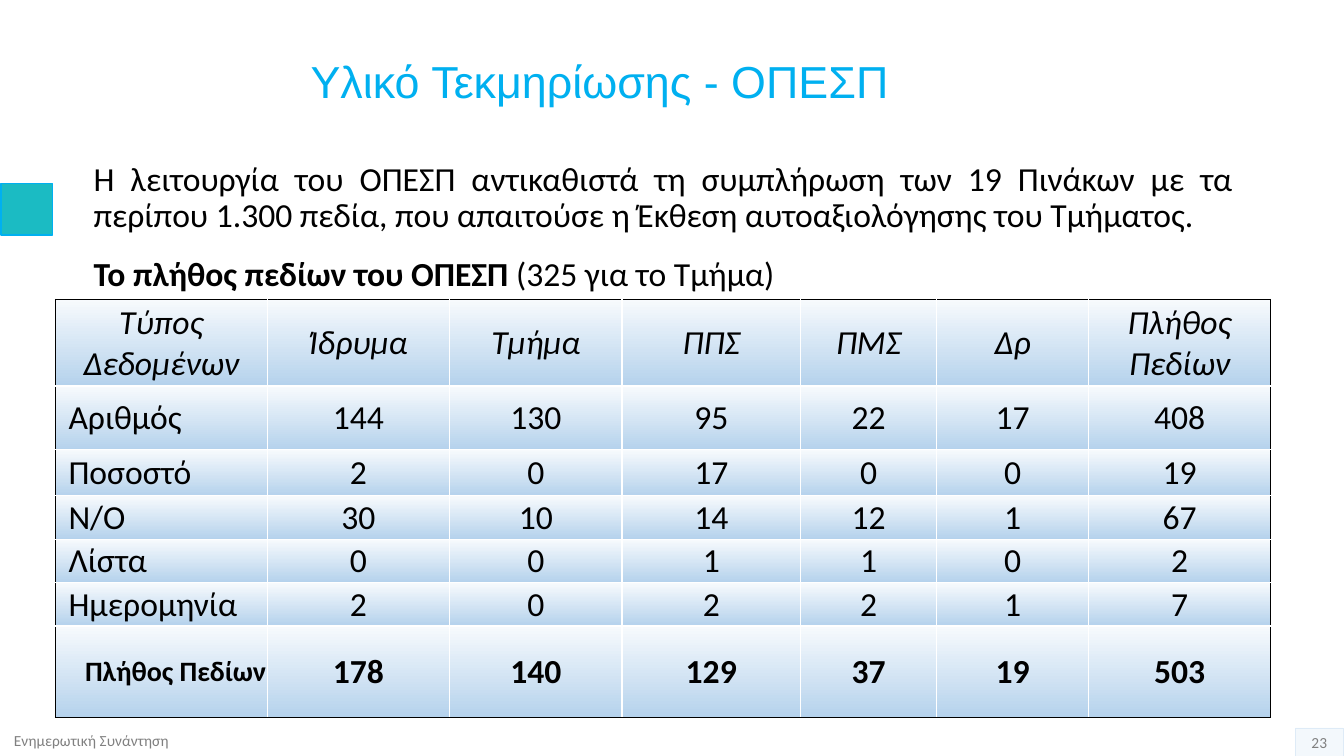
from dataclasses import dataclass

from lxml.etree import SubElement
from pptx import Presentation
from pptx.dml.color import RGBColor
from pptx.enum.shapes import MSO_SHAPE as Shape
from pptx.enum.text import MSO_ANCHOR as Anchor, PP_ALIGN as Align
from pptx.oxml.ns import qn
from pptx.util import Inches, Pt


@dataclass(frozen=True)
class Theme:
    """Colours, fonts and type sizes of the slide."""
    accent: str = "00B0F0"
    marker: str = "1BBBC3"
    ink: str = "000000"
    muted: str = "808080"
    pale: str = "DEEBF7"
    grid: str = "FFFFFF"
    cell_top: str = "F7FAFD"
    cell_bottom: str = "B5D2EC"
    title_font: str = "Arial"
    body_font: str = "Calibri"
    title_size: int = 32
    body_size: int = 24
    total_label_size: int = 20
    footer_size: int = 11


THEME = Theme()
TITLE = "Υλικό Τεκμηρίωσης - ΟΠΕΣΠ"
INTRO = ("Η λειτουργία του ΟΠΕΣΠ αντικαθιστά τη συμπλήρωση των 19 Πινάκων με τα "
         "περίπου 1.300 πεδία, που απαιτούσε η Έκθεση αυτοαξιολόγησης του Τμήματος.")
COUNT_LABEL = "Το πλήθος πεδίων του ΟΠΕΣΠ "
COUNT_NOTE = "(325 για το Τμήμα)"
FIELD_COUNTS = [
    ["Τύπος Δεδομένων", "Ίδρυμα", "Τμήμα", "ΠΠΣ", "ΠΜΣ", "Δρ", "Πλήθος Πεδίων"],
    ["Αριθμός", 144, 130, 95, 22, 17, 408],
    ["Ποσοστό", 2, 0, 17, 0, 0, 19],
    ["Ν/Ο", 30, 10, 14, 12, 1, 67],
    ["Λίστα", 0, 0, 1, 1, 0, 2],
    ["Ημερομηνία", 2, 0, 2, 2, 1, 7],
    ["Πλήθος Πεδίων", 178, 140, 129, 37, 19, 503],
]
COLUMN_WIDTHS = [2.1, 1.81, 1.71, 1.77, 1.35, 1.51, 1.8]
ROW_HEIGHTS = [0.86, 0.63, 0.46, 0.43, 0.43, 0.43, 0.91]


def box(left, top, width, height):
    """Return a position and size in inches."""
    return [Inches(length) for length in (left, top, width, height)]


def style_text(text, size, color, face=THEME.body_font, bold=False, italic=False):
    """Format the font of a run or of a paragraph."""
    text.font.size, text.font.name = Pt(size), face
    text.font.bold, text.font.italic = bold, italic
    text.font.color.rgb = RGBColor.from_string(color)


def add_title(slide):
    """Place and format the title placeholder."""
    title = slide.shapes.title
    title.left, title.top, title.width, title.height = box(0.92, 0.11, 10.06, 1.45)
    title.text_frame.text = TITLE
    title.text_frame.vertical_anchor = Anchor.MIDDLE
    heading = title.text_frame.paragraphs[0]
    heading.alignment, heading.line_spacing = Align.CENTER, 0.9
    style_text(heading.runs[0], THEME.title_size, THEME.accent, THEME.title_font)


def add_rectangle(slide, place, fill, line, line_width):
    """Draw a flat rectangle with an outline."""
    rectangle = slide.shapes.add_shape(Shape.RECTANGLE, *place)
    rectangle.shadow.inherit = False
    rectangle.fill.solid()
    rectangle.fill.fore_color.rgb = RGBColor.from_string(fill)
    rectangle.line.color.rgb = RGBColor.from_string(line)
    rectangle.line.width = Pt(line_width)
    return rectangle


def write_footer(shape, text, alignment):
    """Write a small muted line in the middle of a shape's height."""
    frame = shape.text_frame
    frame.word_wrap = True
    frame.vertical_anchor = Anchor.MIDDLE
    frame.margin_top = frame.margin_bottom = 0
    frame.text = text
    frame.paragraphs[0].alignment = alignment
    style_text(frame.paragraphs[0].runs[0], THEME.footer_size, THEME.muted)


def add_footer(slide):
    """Add the meeting name and the page number."""
    meeting = slide.shapes.add_textbox(*box(0.04, 7.2, 4.66, 0.3))
    write_footer(meeting, "Ενημερωτική Συνάντηση", Align.LEFT)
    page = add_rectangle(slide, box(12.85, 7.22, 0.47, 0.28), THEME.pale, THEME.pale, 0.25)
    tint = page.fill._xPr.find(qn("a:solidFill"))[0]
    SubElement(tint, qn("a:alpha"), val="35000")
    write_footer(page, "23", Align.CENTER)


def add_intro(slide):
    """Add the two paragraphs above the table."""
    frame = slide.shapes.add_textbox(*box(0.83, 1.56, 11.5, 4.76)).text_frame
    frame.word_wrap = True
    intro, count = frame.paragraphs[0], frame.add_paragraph()
    intro.text = INTRO
    intro.space_after, count.space_before = Pt(6), Pt(10)
    for text in (COUNT_LABEL, COUNT_NOTE):
        count.add_run().text = text
    for paragraph in (intro, count):
        paragraph.alignment, paragraph.line_spacing = Align.JUSTIFY, 0.9
        for run in paragraph.runs:
            style_text(run, THEME.body_size, THEME.ink, bold=run.text == COUNT_LABEL)


def set_borders(cell, outer_sides):
    """Draw dark borders on the outer sides and light ones inside."""
    properties = cell._tc.get_or_add_tcPr()
    for side, is_outer in zip("LRTB", outer_sides):
        border = SubElement(properties, qn(f"a:ln{side}"), w=str(Pt(1)))
        paint = SubElement(border, qn("a:solidFill"))
        SubElement(paint, qn("a:srgbClr"), val=THEME.ink if is_outer else THEME.grid)


def fill_gradient(cell):
    """Fill a cell from light at the top to blue at the bottom."""
    cell.fill.gradient()
    cell.fill.gradient_angle = 270
    for stop, color in zip(cell.fill.gradient_stops, (THEME.cell_top, THEME.cell_bottom)):
        stop.color.rgb = RGBColor.from_string(color)


def write_cell(cell, value, is_header, is_label, is_total):
    """Write a value in the style of its row and column."""
    indented = is_label and not is_header and not is_total
    cell.margin_left = Inches(0.13 if indented else 0.01)
    cell.margin_right = cell.margin_top = Inches(0.01)
    cell.margin_bottom = 0
    cell.vertical_anchor = Anchor.MIDDLE
    cell.text_frame.text = str(value)
    paragraph = cell.text_frame.paragraphs[0]
    paragraph.alignment = Align.LEFT if indented else Align.CENTER
    size = THEME.body_size
    if is_label and is_total:
        paragraph.alignment, size = Align.RIGHT, THEME.total_label_size
    style_text(paragraph.runs[0], size, THEME.ink, bold=is_total, italic=is_header)


def add_field_table(slide):
    """Add the table of field counts by data type."""
    last_row, last_column = len(ROW_HEIGHTS) - 1, len(COLUMN_WIDTHS) - 1
    place = box(0.55, 2.97, sum(COLUMN_WIDTHS), sum(ROW_HEIGHTS))
    table = slide.shapes.add_table(last_row + 1, last_column + 1, *place).table
    table.first_row = table.horz_banding = False
    for column, width in zip(table.columns, COLUMN_WIDTHS):
        column.width = Inches(width)
    for row, height in zip(table.rows, ROW_HEIGHTS):
        row.height = Inches(height)
    for r, counts in enumerate(FIELD_COUNTS):
        for c, value in enumerate(counts):
            cell = table.cell(r, c)
            set_borders(cell, (c == 0, c == last_column, r == 0, r == last_row))
            fill_gradient(cell)
            write_cell(cell, value, r == 0, c == 0, r == last_row)


def main():
    """Build the slide and save it."""
    deck = Presentation()
    deck.slide_width, deck.slide_height = Inches(13.33), Inches(7.5)
    slide = deck.slides.add_slide(deck.slide_layouts[5])
    add_rectangle(slide, box(0.01, 1.82, 0.51, 0.51), THEME.marker, THEME.accent, 1)
    add_footer(slide)
    add_title(slide)
    add_intro(slide)
    add_field_table(slide)
    deck.save("out.pptx")


if __name__ == "__main__":
    main()
